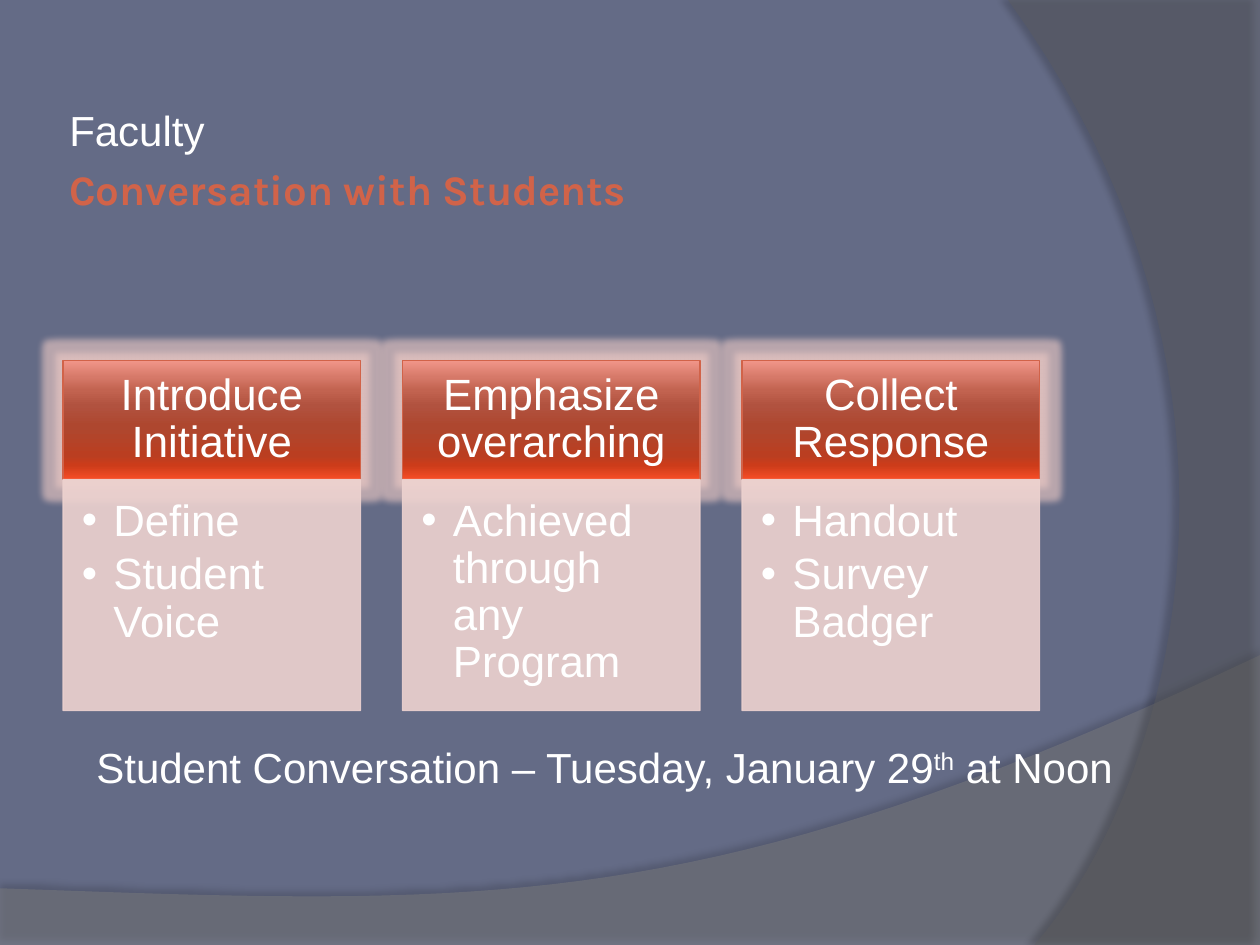
from lxml import etree
from pptx import Presentation
from pptx.dml.color import RGBColor
from pptx.enum import shapes, text
from pptx.oxml import parse_xml
from pptx.oxml.ns import nsdecls, qn
from pptx.util import Pt

SLATE = RGBColor(0x64, 0x6B, 0x86)
GRAY = RGBColor(0x7F, 0x7F, 0x7F)
DARK = RGBColor(0x5E, 0x5E, 0x5E)
ORANGE = RGBColor(0xD1, 0x63, 0x49)
PINK = RGBColor(0xEE, 0xD3, 0xD0)
WHITE = RGBColor(0xFF, 0xFF, 0xFF)
HEADER_STOPS = [(0, "F09588"), (25, "C26350"), (38, "B1523F"), (55, "AE472F"),
                (80, "BA3E21"), (88, "CC3C1A"), (100, "F64D26")]


def add_run(p, words, size, color=WHITE, font="Arial"):
    r = p.add_run()
    r.text = words
    r.font.size, r.font.name = Pt(size), font
    r.font.color.rgb = color
    return r


def set_alpha(fill_parent, percent):
    color = fill_parent.find(qn("a:solidFill"))[0]
    etree.SubElement(color, qn("a:alpha"), val=str(percent * 1000))


prs = Presentation()
prs.slide_width, prs.slide_height = Pt(720), Pt(540)
s = prs.slides.add_slide(prs.slide_layouts[5])
s.background.fill.solid()
s.background.fill.fore_color.rgb = SLATE

# Background waves: straight corners, then one Bezier curve sampled as points
# (corners, curve controls, fill, opacity, shadow opacity, distance, direction)
waves = [
    ([(0, 507.6), (0, 540), (720, 540), (720, 374.4)],
     [(402.5, 524.9), (281.5, 517.7), (0, 507.6)], GRAY, 45, 35, 3.5, 270),
    ([(720, 0), (720, 540), (591.1, 540)],
     [(673.2, 445.7), (733, 216), (576, 0)], DARK, 40, 45, 4, 180),
]
for corners, controls, color, opacity, shade, dist, angle in waves:
    curve = [corners[-1]] + controls
    points = list(corners)
    for i in range(1, 41):
        t = i / 40
        weights = ((1 - t) ** 3, 3 * t * (1 - t) ** 2, 3 * t * t * (1 - t), t ** 3)
        points.append(tuple(sum(w * c[axis] for w, c in zip(weights, curve))
                            for axis in (0, 1)))
    points = [(Pt(x), Pt(y)) for x, y in points]
    fb = s.shapes.build_freeform(*points[0], scale=1.0)
    fb.add_line_segments(points[1:], close=True)
    sp = fb.convert_to_shape()
    sp.fill.solid()
    sp.fill.fore_color.rgb = color
    set_alpha(sp._element.spPr, opacity)
    sp.line.fill.background()
    sp._element.spPr.append(parse_xml(
        f'<a:effectLst {nsdecls("a")}><a:outerShdw blurRad="{Pt(4)}" dist="{Pt(dist)}" '
        f'dir="{angle * 60000}" algn="ctr" rotWithShape="0"><a:srgbClr val="000000">'
        f'<a:alpha val="{shade * 1000}"/></a:srgbClr></a:outerShdw></a:effectLst>'))

# Title and the line above it
title = s.shapes.title
title.left, title.top, title.width, title.height = Pt(36), Pt(93.6), Pt(396), Pt(57.6)
kicker = s.shapes.add_textbox(Pt(36), Pt(16.6), Pt(216), Pt(72))
for sp, anchor in ((title, text.MSO_ANCHOR.TOP), (kicker, text.MSO_ANCHOR.BOTTOM)):
    tf = sp.text_frame
    tf.word_wrap, tf.auto_size = True, text.MSO_AUTO_SIZE.NONE
    tf.vertical_anchor = anchor
    tf.margin_left = tf.margin_right = Pt(3.6)
    tf.margin_top = tf.margin_bottom = 0
    tf.paragraphs[0].alignment = text.PP_ALIGN.LEFT
r = add_run(title.text_frame.paragraphs[0], "Conversation with Students", 24, ORANGE, "Karla")
r.font.bold = True
add_run(kicker.text_frame.paragraphs[0], "Faculty", 24)

# Three columns: glowing header above a bulleted panel
columns = [
    ("Introduce Initiative", ["Define", "Student Voice"]),
    ("Emphasize overarching", ["Achieved through any Program"]),
    ("Collect Response", ["Handout", "Survey Badger"]),
]
for i, (heading, bullets) in enumerate(columns):
    left = Pt(36 + 194 * i)
    header = s.shapes.add_shape(shapes.MSO_SHAPE.RECTANGLE, left, Pt(206), Pt(170), Pt(68))
    header.fill.gradient()
    header.fill.gradient_angle = 270
    stops = header._element.spPr.find(qn("a:gradFill")).find(qn("a:gsLst"))
    for old in list(stops):
        stops.remove(old)
    for pos, value in HEADER_STOPS:
        gs = etree.SubElement(stops, qn("a:gs"), pos=str(pos * 1000))
        etree.SubElement(gs, qn("a:srgbClr"), val=value)
    header.line.color.rgb = ORANGE
    header.line.width = Pt(0.75)
    header._element.spPr.append(parse_xml(
        f'<a:effectLst {nsdecls("a")}><a:glow rad="{Pt(8)}"><a:srgbClr val="F0CCC6">'
        f'<a:alpha val="60000"/></a:srgbClr></a:glow></a:effectLst>'))
    tf = header.text_frame
    tf.word_wrap = True
    tf.vertical_anchor = text.MSO_ANCHOR.MIDDLE
    tf.margin_left = tf.margin_right = Pt(13.7)
    tf.margin_top = tf.margin_bottom = Pt(7.9)
    p = tf.paragraphs[0]
    p.alignment, p.line_spacing = text.PP_ALIGN.CENTER, 0.9
    add_run(p, heading, 25)

    panel = s.shapes.add_shape(shapes.MSO_SHAPE.RECTANGLE, left, Pt(274), Pt(170), Pt(132))
    panel.shadow.inherit = False
    panel.fill.solid()
    panel.fill.fore_color.rgb = PINK
    panel.line.color.rgb = PINK
    panel.line.width = Pt(0.75)
    set_alpha(panel._element.spPr, 90)
    set_alpha(panel._element.spPr.find(qn("a:ln")), 90)
    tf = panel.text_frame
    tf.word_wrap = True
    tf.vertical_anchor = text.MSO_ANCHOR.TOP
    tf.margin_left = tf.margin_top = Pt(10.8)
    tf.margin_right, tf.margin_bottom = Pt(13.7), Pt(15.8)
    for n, bullet in enumerate(bullets):
        p = tf.add_paragraph() if n else tf.paragraphs[0]
        p.alignment, p.line_spacing, p.space_after = text.PP_ALIGN.LEFT, 0.9, Pt(3.75)
        pPr = p._p.get_or_add_pPr()
        pPr.set("marL", str(Pt(18)))
        pPr.set("indent", str(-Pt(18)))
        etree.SubElement(pPr, qn("a:buFont"), typeface="Arial")
        etree.SubElement(pPr, qn("a:buChar"), char="•")
        add_run(p, bullet, 25)

# Date line
date = s.shapes.add_textbox(Pt(48), Pt(420), Pt(624), Pt(36))
date.text_frame.word_wrap = True
p = date.text_frame.paragraphs[0]
add_run(p, "Student Conversation – Tuesday, January 29", 24)
add_run(p, "th", 24)._r.get_or_add_rPr().set("baseline", "30000")
add_run(p, " at Noon", 24)

prs.save("out.pptx")
